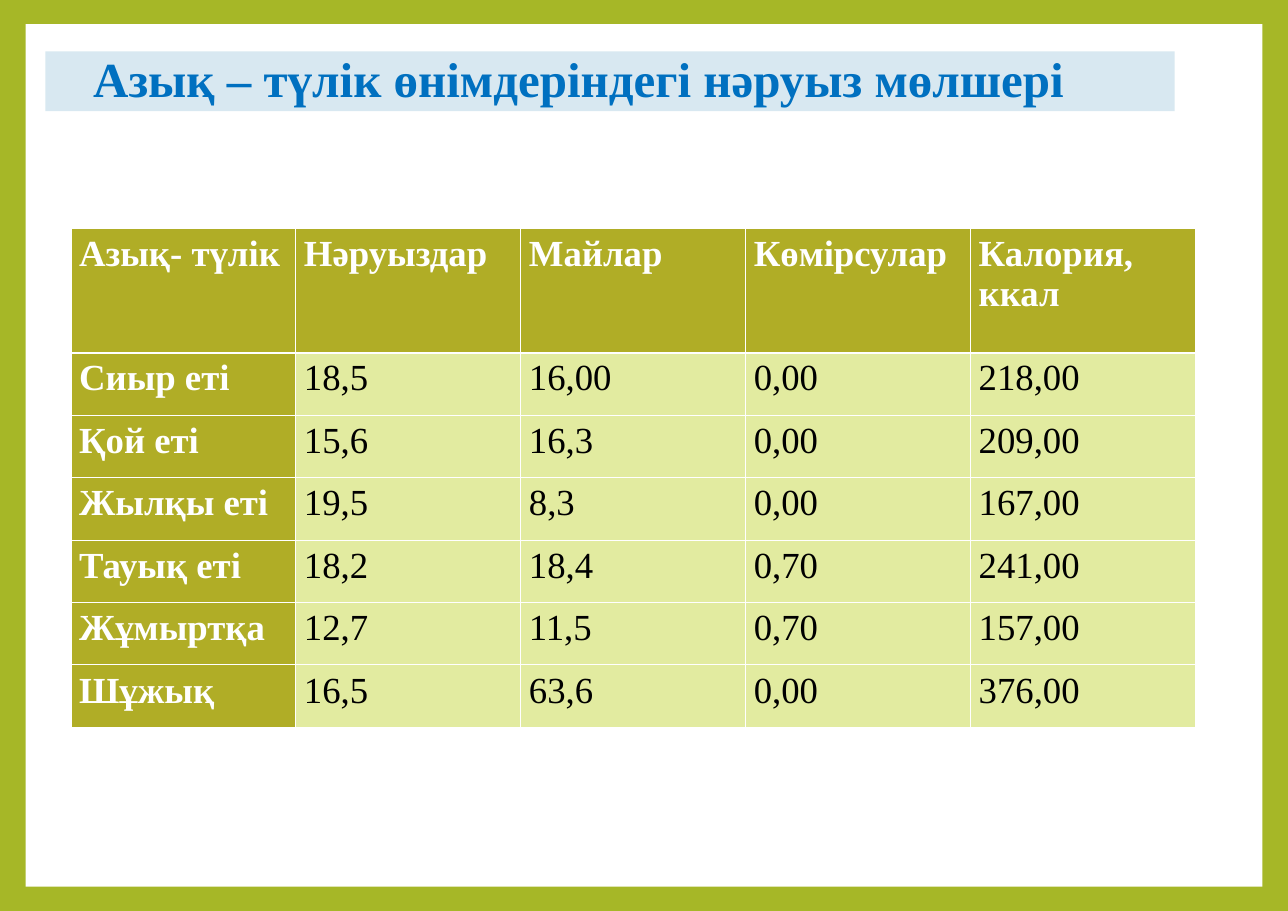
from lxml.etree import SubElement
from pptx import Presentation
from pptx.dml.color import RGBColor as RGB
from pptx.enum.shapes import MSO_SHAPE as Shape
from pptx.enum.text import MSO_ANCHOR as Anchor, MSO_AUTO_SIZE as AutoSize, PP_ALIGN as Align
from pptx.oxml.ns import qn
from pptx.util import Pt

THEME = {
    "font": "Times New Roman",
    "title_size": 32,
    "table_size": 24,
    "frame": "A6B727",
    "white": "FFFFFF",
    "title_band": "D8E8F1",
    "title_text": "0070C0",
    "heading": "B0AD26",
    "value": "E2EBA0",
    "value_text": "000000",
}
FOODS = [
    ["Азық- түлік", "Нәруыздар", "Майлар", "Көмірсулар", "Калория, ккал"],
    ["Сиыр еті", "18,5", "16,00", "0,00", "218,00"],
    ["Қой еті", "15,6", "16,3", "0,00", "209,00"],
    ["Жылқы еті", "19,5", "8,3", "0,00", "167,00"],
    ["Тауық еті", "18,2", "18,4", "0,70", "241,00"],
    ["Жұмыртқа", "12,7", "11,5", "0,70", "157,00"],
    ["Шұжық", "16,5", "63,6", "0,00", "376,00"],
]
COLUMN_WIDTH, ROW_HEIGHT = 147, 40.8
THIN, THICK = 0.45, 1.47


def style_text(paragraph, size, color, bold):
    font = paragraph.runs[0].font
    font.name = THEME["font"]
    font.size = Pt(size)
    font.bold = bold
    font.color.rgb = RGB.from_string(THEME[color])


def add_borders(cell, top, bottom):
    properties = cell._tc.get_or_add_tcPr()
    sides = [("a:lnL", THIN), ("a:lnR", THIN), ("a:lnT", top), ("a:lnB", bottom)]
    for position, (side, width) in enumerate(sides):
        line = SubElement(properties, qn(side), w=str(Pt(width)))
        fill = SubElement(line, qn("a:solidFill"))
        SubElement(fill, qn("a:srgbClr"), val=THEME["white"])
        properties.insert(position, line)


deck = Presentation()
deck.slide_width, deck.slide_height = Pt(841.68), Pt(595.44)
slide = deck.slides.add_slide(deck.slide_layouts[5])
slide.background.fill.solid()
slide.background.fill.fore_color.rgb = RGB.from_string(THEME["frame"])

panel = slide.shapes.add_shape(Shape.RECTANGLE, Pt(16.7), Pt(15.8), Pt(808.3), Pt(563.8))
panel.shadow.inherit = False
panel.fill.solid()
panel.fill.fore_color.rgb = RGB.from_string(THEME["white"])
panel.line.fill.background()

title = slide.shapes.title
panel._element.addnext(title._element)
title.left, title.top, title.width, title.height = Pt(29.7), Pt(33.6), Pt(738), Pt(39)
title.fill.solid()
title.fill.fore_color.rgb = RGB.from_string(THEME["title_band"])
heading = title.text_frame
heading.text = "Азық – түлік өнімдеріндегі нәруыз мөлшері"
heading.auto_size = AutoSize.NONE
heading.vertical_anchor = Anchor.MIDDLE
heading.margin_left = Pt(31.2)
heading.paragraphs[0].alignment = Align.LEFT
heading.paragraphs[0].line_spacing = 0.9
style_text(heading.paragraphs[0], THEME["title_size"], "title_text", True)

food_table = slide.shapes.add_table(
    len(FOODS), len(FOODS[0]), Pt(46.3), Pt(149),
    Pt(COLUMN_WIDTH * len(FOODS[0])), Pt(ROW_HEIGHT * (len(FOODS) + 1)),
).table
food_table.first_col = True
food_table.horz_banding = False
for column in food_table.columns:
    column.width = Pt(COLUMN_WIDTH)

for row, food in enumerate(FOODS):
    food_table.rows[row].height = Pt(ROW_HEIGHT if row else 2 * ROW_HEIGHT)
    for column, content in enumerate(food):
        is_heading = row == 0 or column == 0
        cell = food_table.cell(row, column)
        cell.text = content
        cell.margin_left = cell.margin_right = Pt(5.4)
        cell.margin_top = cell.margin_bottom = Pt(3.6)
        cell.fill.solid()
        cell.fill.fore_color.rgb = RGB.from_string(THEME["heading" if is_heading else "value"])
        style_text(cell.text_frame.paragraphs[0], THEME["table_size"],
                   "white" if is_heading else "value_text", is_heading)
        add_borders(cell, THICK if row == 1 else THIN, THICK if row == 0 else THIN)

deck.save("out.pptx")
